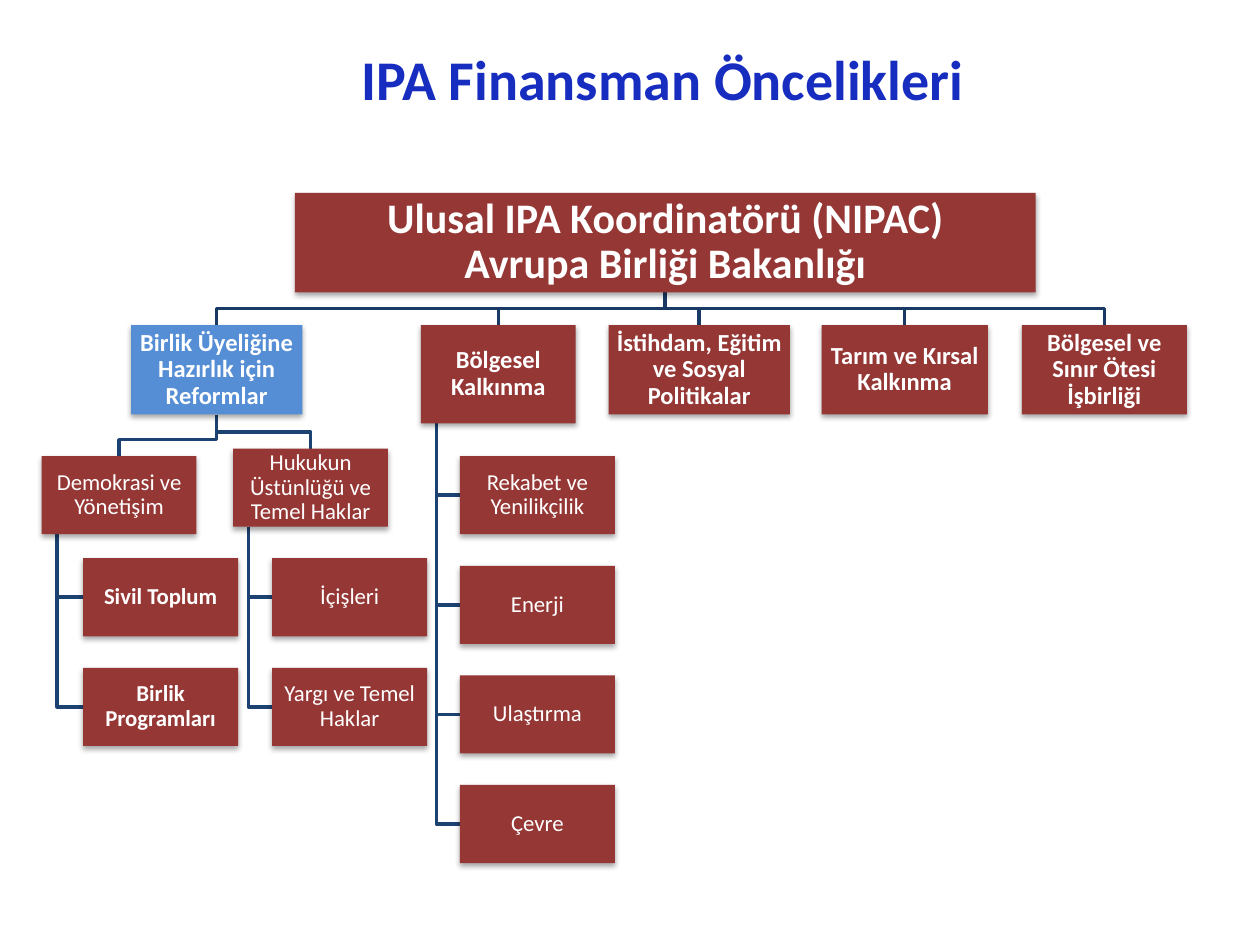
from dataclasses import dataclass

from lxml import etree
from pptx import Presentation
from pptx.dml.color import RGBColor
from pptx.enum.shapes import MSO_SHAPE
from pptx.enum.text import MSO_ANCHOR, PP_ALIGN
from pptx.oxml.ns import qn
from pptx.util import Inches, Pt

RECTANGLE = MSO_SHAPE.RECTANGLE
CENTER = PP_ALIGN.CENTER
MIDDLE = MSO_ANCHOR.MIDDLE

FONT = "Calibri"
WHITE, BLUE, RED = "FFFFFF", "558ED5", "953735"
TITLE_BLUE, TOP_LINE, LOWER_LINE = "172DBF", "193A64", "1C4271"

AREA_TOP, AREA_HEIGHT = 2.58, 0.71
UNIT_WIDTH, UNIT_HEIGHT = 1.23, 0.62
UNIT_PITCH = 0.87
ELBOW_DROP = 0.13
TRUNK_SHARE = 0.1


@dataclass
class Box:
    text: str
    left: float
    top: float
    width: float = UNIT_WIDTH
    height: float = UNIT_HEIGHT
    size: int = 13
    bold: bool = False
    fill: str = RED

    @property
    def center(self):
        return self.left + self.width / 2

    @property
    def bottom(self):
        return self.top + self.height


def rgb(color):
    return RGBColor.from_string(color)


def area(text, left, width, height=AREA_HEIGHT, fill=RED):
    return Box(text, left, AREA_TOP, width, height, 14, True, fill)


def stack(texts, left, top, bold=False):
    return [Box(text, left, top + row * UNIT_PITCH, bold=bold)
            for row, text in enumerate(texts)]


def write(shape, text, size, color, bold, inset):
    frame = shape.text_frame
    frame.word_wrap = True
    frame.vertical_anchor = MIDDLE
    frame.margin_left = frame.margin_right = Inches(inset)
    frame.margin_top = frame.margin_bottom = Inches(inset)
    paragraph = frame.paragraphs[0]
    paragraph.text = text
    paragraph.alignment = CENTER
    paragraph.line_spacing = 0.9
    for run in paragraph.runs:
        run.font.name = FONT
        run.font.size = Pt(size)
        run.font.bold = bold
        run.font.color.rgb = rgb(color)


def add_title(slide, text):
    title = slide.shapes.add_textbox(Inches(2.25), Inches(0.3), Inches(6.02), Inches(0.71))
    write(title, text, 32, TITLE_BLUE, True, 0.05)


def add_drop_shadow(shape):
    shape.shadow.inherit = False
    effects = shape._element.spPr.find(qn("a:effectLst"))
    shadow = etree.SubElement(effects, qn("a:outerShdw"), blurRad=str(Pt(3.1)),
                              dist=str(Pt(1.8)), dir="5400000", rotWithShape="0")
    color = etree.SubElement(shadow, qn("a:srgbClr"), val="000000")
    etree.SubElement(color, qn("a:alpha"), val="35000")


def add_box(slide, box):
    shape = slide.shapes.add_shape(RECTANGLE, Inches(box.left), Inches(box.top),
                                   Inches(box.width), Inches(box.height))
    shape.fill.solid()
    shape.fill.fore_color.rgb = rgb(box.fill)
    shape.line.fill.background()
    add_drop_shadow(shape)
    write(shape, box.text, box.size, WHITE, box.bold, 0.01)


def add_path(slide, points, color):
    start, *rest = [(Inches(x), Inches(y)) for x, y in points]
    builder = slide.shapes.build_freeform(*start)
    builder.add_line_segments(rest, close=False)
    path = builder.convert_to_shape()
    path.fill.background()
    path.line.color.rgb = rgb(color)
    path.line.width = Pt(2)
    path.shadow.inherit = False


def branch_down(slide, parent, children, color):
    """Join the parent's bottom centre to the top centre of each child."""
    for child in children:
        elbow = child.top - ELBOW_DROP
        add_path(slide, [(parent.center, parent.bottom), (parent.center, elbow),
                         (child.center, elbow), (child.center, child.top)], color)


def branch_side(slide, parent, children):
    """Join a trunk near the parent's left edge to the left side of each child."""
    trunk = parent.left + parent.width * TRUNK_SHARE
    for child in children:
        middle = child.top + child.height / 2
        add_path(slide, [(trunk, parent.bottom), (trunk, middle),
                         (child.left, middle)], LOWER_LINE)


def main():
    presentation = Presentation()
    presentation.slide_width, presentation.slide_height = Inches(10), Inches(7.5)
    slide = presentation.slides.add_slide(presentation.slide_layouts[6])
    add_title(slide, "IPA Finansman Öncelikleri")

    coordinator = Box("Ulusal IPA Koordinatörü (NIPAC)\vAvrupa Birliği Bakanlığı",
                      2.34, 1.53, 5.88, 0.79, 24, True)
    reforms = area("Birlik Üyeliğine Hazırlık için Reformlar", 1.04, 1.36, fill=BLUE)
    regional = area("Bölgesel Kalkınma", 3.34, UNIT_WIDTH, 0.78)
    areas = [
        reforms,
        regional,
        area("İstihdam, Eğitim ve Sosyal Politikalar", 4.83, 1.44),
        area("Tarım ve Kırsal Kalkınma", 6.52, 1.32),
        area("Bölgesel ve Sınır Ötesi İşbirliği", 8.11, 1.31),
    ]
    democracy = Box("Demokrasi ve Yönetişim", 0.33, 3.62)
    law = Box("Hukukun Üstünlüğü ve Temel Haklar", 1.85, 3.56)
    side_branches = [
        (democracy, stack(["Sivil Toplum", "Birlik Programları"], 0.66, 4.43, bold=True)),
        (law, stack(["İçişleri", "Yargı ve Temel Haklar"], 2.16, 4.43)),
        (regional, stack(["Rekabet ve Yenilikçilik", "Enerji", "Ulaştırma", "Çevre"],
                         3.65, 3.62)),
    ]

    branch_down(slide, coordinator, areas, TOP_LINE)
    branch_down(slide, reforms, [democracy, law], LOWER_LINE)
    for parent, children in side_branches:
        branch_side(slide, parent, children)

    for box in [coordinator, *areas, democracy, law]:
        add_box(slide, box)
    for _, children in side_branches:
        for box in children:
            add_box(slide, box)

    presentation.save("out.pptx")


if __name__ == "__main__":
    main()
